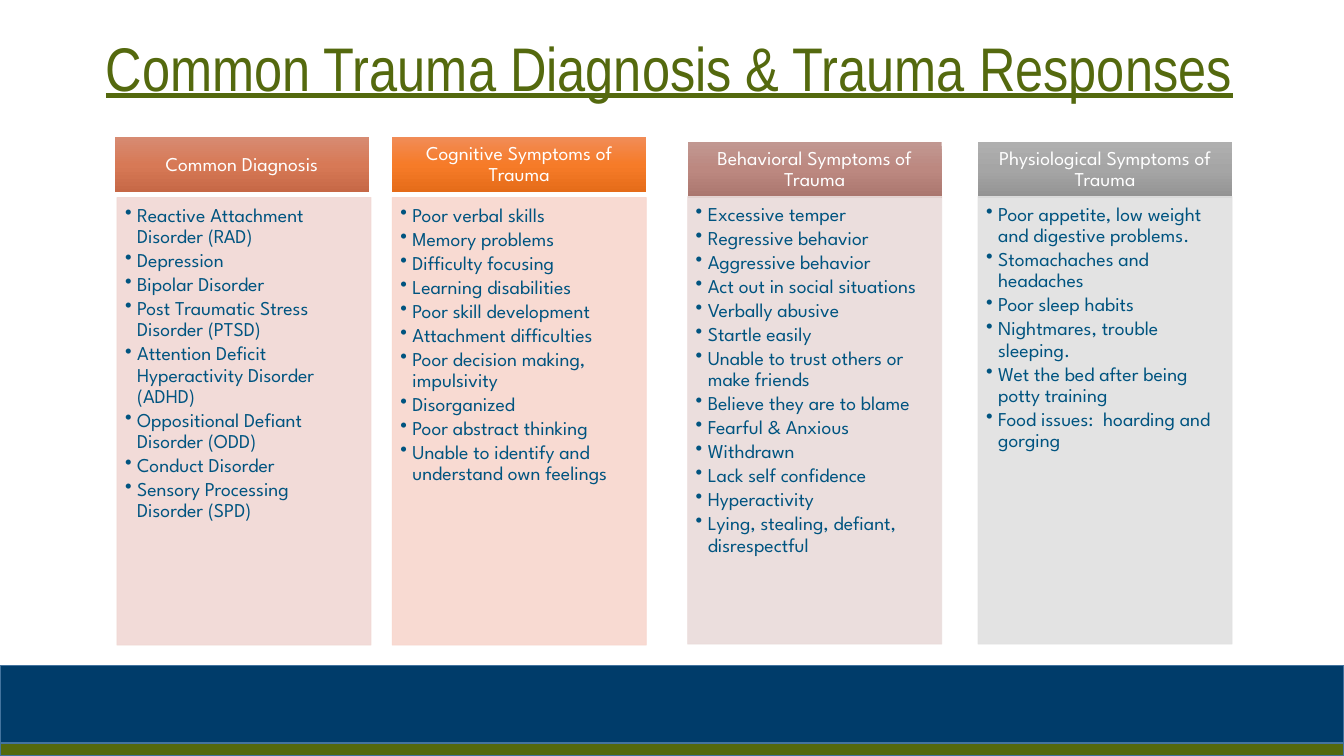
import copy
from dataclasses import dataclass

import pptx
import pptx.dml.color
import pptx.enum.shapes
import pptx.enum.text
import pptx.oxml
import pptx.oxml.ns
import pptx.util
from pptx.dml.color import RGBColor
from pptx.util import Inches

WHITE = RGBColor(0xFF, 0xFF, 0xFF)
OLIVE = RGBColor(0x54, 0x69, 0x0E)
NAVY = RGBColor(0x00, 0x3C, 0x6A)
BAND_LINE = RGBColor(0x43, 0x73, 0x9E)
BODY_TEXT = RGBColor(0x00, 0x54, 0x80)
RUST = [RGBColor(0xD7, 0x8B, 0x72), RGBColor(0xD7, 0x79, 0x56), RGBColor(0xC6, 0x68, 0x46)]
ORANGE = [RGBColor(0xF1, 0x8C, 0x57), RGBColor(0xF6, 0x7B, 0x28), RGBColor(0xE5, 0x6C, 0x19)]
MAUVE = [RGBColor(0xC1, 0x97, 0x91), RGBColor(0xBC, 0x88, 0x80), RGBColor(0xAA, 0x76, 0x6E)]
GREY = [RGBColor(0xAF, 0xAF, 0xAF), RGBColor(0xA5, 0xA5, 0xA5), RGBColor(0x93, 0x93, 0x93)]
PALE_RUST = RGBColor(0xF1, 0xD8, 0xD4)
PALE_ORANGE = RGBColor(0xF8, 0xD7, 0xCE)
PALE_MAUVE = RGBColor(0xE9, 0xDB, 0xDA)
PALE_GREY = RGBColor(0xE1, 0xE1, 0xE1)

SLIDE_WIDTH, SLIDE_HEIGHT = 13.33, 7.5
COLUMN_WIDTH, HEADER_HEIGHT, BODY_HEIGHT = 2.52, 0.55, 4.44
BODY_FONT, TITLE_FONT = "League Spartan", "Arial Narrow"


@dataclass
class Column:
    heading: str
    items: list
    header_at: tuple
    body_at: tuple
    gradient: list
    tint: RGBColor


COLUMNS = [
    Column("Cognitive Symptoms of Trauma",
           ["Poor verbal skills", "Memory problems", "Difficulty focusing",
            "Learning disabilities", "Poor skill development", "Attachment difficulties",
            "Poor decision making, impulsivity", "Disorganized", "Poor abstract thinking",
            "Unable to identify and understand own feelings"],
           (3.89, 1.36), (3.89, 1.96), ORANGE, PALE_ORANGE),
    Column("Common Diagnosis",
           ["Reactive Attachment Disorder (RAD)", "Depression", "Bipolar Disorder",
            "Post Traumatic Stress Disorder (PTSD)",
            "Attention Deficit Hyperactivity Disorder (ADHD)",
            "Oppositional Defiant Disorder (ODD)", "Conduct Disorder",
            "Sensory Processing Disorder (SPD)"],
           (1.14, 1.36), (1.16, 1.96), RUST, PALE_RUST),
    Column("Behavioral Symptoms of Trauma",
           ["Excessive temper", "Regressive behavior", "Aggressive behavior",
            "Act out in social situations", "Verbally abusive", "Startle easily",
            "Unable to trust others or make friends", "Believe they are to blame",
            "Fearful & Anxious", "Withdrawn", "Lack self confidence", "Hyperactivity",
            "Lying, stealing, defiant, disrespectful"],
           (6.82, 1.41), (6.82, 1.95), MAUVE, PALE_MAUVE),
    Column("Physiological Symptoms of Trauma",
           ["Poor appetite, low weight and digestive problems.",
            "Stomachaches and headaches", "Poor sleep habits",
            "Nightmares, trouble sleeping.", "Wet the bed after being potty training",
            "Food issues:  hoarding and gorging"],
           (9.7, 1.41), (9.7, 1.95), GREY, PALE_GREY),
]


def add_rectangle(slide, left, top, width, height):
    shape = slide.shapes.add_shape(pptx.enum.shapes.MSO_SHAPE.RECTANGLE, Inches(left),
                                   Inches(top), Inches(width), Inches(height))
    shape.shadow.inherit = False
    return shape


def set_bullet(paragraph):
    properties = paragraph._p.get_or_add_pPr()
    properties.set("marL", str(Inches(0.12)))
    properties.set("indent", str(Inches(-0.12)))
    bullet = pptx.oxml.parse_xml(
        f'<a:buChar {pptx.oxml.ns.nsdecls("a")} char="•"/>')
    properties.append(bullet)


def write_text(shape, lines, *, size, font, color, insets, centered=False, middle=False,
               bulleted=False, underline=False, space_after=0):
    frame = shape.text_frame
    frame.word_wrap = True
    frame.margin_left, frame.margin_top, frame.margin_right, frame.margin_bottom = map(
        Inches, insets)
    anchor = pptx.enum.text.MSO_ANCHOR
    frame.vertical_anchor = anchor.MIDDLE if middle else anchor.TOP
    align = pptx.enum.text.PP_ALIGN
    for index, line in enumerate(lines):
        paragraph = frame.add_paragraph() if index else frame.paragraphs[0]
        if bulleted:
            set_bullet(paragraph)
        paragraph.alignment = align.CENTER if centered else align.LEFT
        paragraph.line_spacing = 0.9
        paragraph.space_after = pptx.util.Pt(space_after)
        run = paragraph.add_run()
        run.text = line
        run.font.size = pptx.util.Pt(size)
        run.font.name = font
        run.font.color.rgb = color
        run.font.underline = underline


def fill_gradient(shape, colors):
    shape.fill.gradient()
    shape.fill.gradient_angle = 270
    stop_list = shape._element.spPr.find(".//" + pptx.oxml.ns.qn("a:gsLst"))
    stop_list.append(copy.deepcopy(stop_list[0]))
    for index, (stop, color) in enumerate(zip(shape.fill.gradient_stops, colors)):
        stop.position = index / 2
        stop.color.rgb = color


def soften(shape):
    for color in shape._element.spPr.iter(pptx.oxml.ns.qn("a:srgbClr")):
        color.append(pptx.oxml.parse_xml(
            f'<a:alpha {pptx.oxml.ns.nsdecls("a")} val="90000"/>'))


def add_footer(slide, top, navy_height, olive_height):
    bands = [(top + navy_height, olive_height, OLIVE), (top, navy_height, NAVY)]
    for band_top, height, color in bands:
        band = add_rectangle(slide, 0, band_top, SLIDE_WIDTH, height)
        band.fill.solid()
        band.fill.fore_color.rgb = color
        band.line.color.rgb = BAND_LINE
        band.line.width = pptx.util.Pt(1)


def add_column(slide, column):
    header = add_rectangle(slide, *column.header_at, COLUMN_WIDTH, HEADER_HEIGHT)
    fill_gradient(header, column.gradient)
    header.line.fill.background()
    write_text(header, [column.heading], size=14, font=BODY_FONT, color=WHITE,
               insets=(0.11, 0.06, 0.11, 0.06), centered=True, middle=True)

    body = add_rectangle(slide, *column.body_at, COLUMN_WIDTH, BODY_HEIGHT)
    body.fill.solid()
    body.fill.fore_color.rgb = column.tint
    body.line.color.rgb = column.tint
    body.line.width = pptx.util.Pt(0.5)
    soften(body)
    write_text(body, column.items, size=14, font=BODY_FONT, color=BODY_TEXT,
               insets=(0.08, 0.08, 0.11, 0.12), bulleted=True, space_after=2)


def add_title(slide, left, top, width, height):
    title = slide.shapes.add_textbox(Inches(left), Inches(top), Inches(width), Inches(height))
    write_text(title, ["Common Trauma Diagnosis & Trauma Responses"], size=44,
               font=TITLE_FONT, color=OLIVE, insets=(0.1, 0.05, 0.1, 0.05),
               centered=True, underline=True)
    title.text_frame.auto_size = pptx.enum.text.MSO_AUTO_SIZE.SHAPE_TO_FIT_TEXT


def main():
    presentation = pptx.Presentation()
    presentation.slide_width = Inches(SLIDE_WIDTH)
    presentation.slide_height = Inches(SLIDE_HEIGHT)
    slide = presentation.slides.add_slide(presentation.slide_layouts[6])
    add_footer(slide, 6.6, 0.77, 0.13)
    for column in COLUMNS:
        add_column(slide, column)
    add_title(slide, 0.14, 0.33, 13, 0.77)
    presentation.save("out.pptx")


if __name__ == "__main__":
    main()
